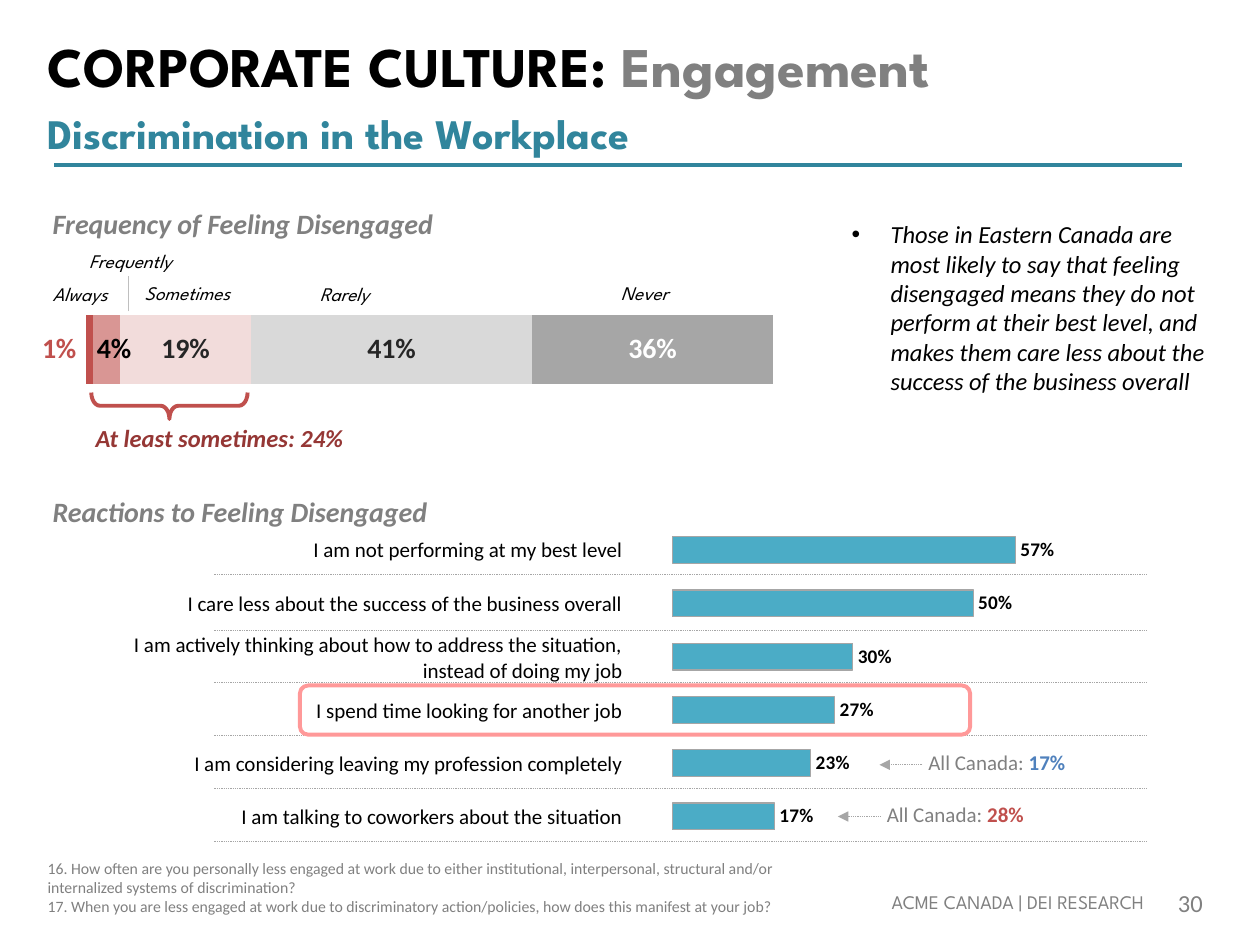
from lxml import etree
from pptx import Presentation
from pptx import util as u
from pptx.chart import data as chart_data
from pptx.dml.color import RGBColor
from pptx.enum import chart as charts
from pptx.enum import dml, shapes, text
from pptx.oxml import ns, parse_xml

PX = 9144  # EMU per px, 100 px to the inch
BODY, HEAD = "Calibri", "League Spartan"
BLACK = RGBColor(0x00, 0x00, 0x00)
WHITE = RGBColor(0xFF, 0xFF, 0xFF)
INK = RGBColor(0x26, 0x26, 0x26)
GREY = RGBColor(0x80, 0x80, 0x80)
MID_GREY = RGBColor(0xA6, 0xA6, 0xA6)
RULE_GREY = RGBColor(0xBF, 0xBF, 0xBF)
PALE_GREY = RGBColor(0xD9, 0xD9, 0xD9)
TEAL = RGBColor(0x31, 0x85, 0x9C)
AQUA = RGBColor(0x4B, 0xAC, 0xC6)
BLUE = RGBColor(0x4F, 0x81, 0xBD)
RED = RGBColor(0xC0, 0x50, 0x4D)
DARK_RED = RGBColor(0x95, 0x37, 0x35)
ROSE = RGBColor(0xD9, 0x96, 0x94)
BLUSH = RGBColor(0xF2, 0xDC, 0xDB)
PINK = RGBColor(0xFF, 0x99, 0x99)
RIGHT = text.PP_ALIGN.RIGHT
PLAIN_TABLE = "{2D5ABB26-0587-4C30-8999-92F81FD0307C}"  # no style, no grid
NO_LEADERS = ('<c:extLst xmlns:c="http://schemas.openxmlformats.org/drawingml/2006/chart">'
              '<c:ext uri="{CE6537A1-D6FC-4f65-9D91-7224C49458BB}" '
              'xmlns:c15="http://schemas.microsoft.com/office/drawing/2012/chart">'
              '<c15:showLeaderLines val="0"/></c:ext></c:extLst>')


def px(*values):
    return [round(value * PX) for value in values]


def set_font(font, size=12, color=BLACK, name=BODY, bold=False, italic=False):
    font.size, font.name = u.Pt(size), name
    font.bold, font.italic = bold, italic
    font.color.rgb = color


def write(para, content, align=None, **style):
    """Fill a paragraph from a string or a list of (text, format changes)."""
    para.alignment = align
    spans = [(content, {})] if isinstance(content, str) else content
    for words, changes in spans:
        if words == "\n":
            para.add_line_break()
            continue
        span = para.add_run()
        span.text = words
        set_font(span.font, **{**style, **changes})


def manual_layout(parent, position, **settings):
    for old in parent.findall(ns.qn("c:layout")):
        parent.remove(old)
    layout = etree.Element(ns.qn("c:layout"))
    manual = etree.SubElement(layout, ns.qn("c:manualLayout"))
    for tag, value in settings.items():
        etree.SubElement(manual, ns.qn("c:" + tag)).set("val", str(value))
    parent.insert(position, layout)


def hide_leader_lines(labels):
    for flag in labels.findall(ns.qn("c:showLeaderLines")):
        flag.set("val", "0")
    labels.append(parse_xml(NO_LEADERS))


class Slide:
    def __init__(self, deck):
        self.page = deck.slides.add_slide(deck.slide_layouts[6])
        self.shapes = self.page.shapes

    def text(self, at, *paras, anchor=text.MSO_ANCHOR.TOP, **style):
        box = self.shapes.add_textbox(*px(*at))
        frame = box.text_frame
        frame.word_wrap, frame.vertical_anchor = True, anchor
        for i, content in enumerate(paras):
            para = frame.add_paragraph() if i else frame.paragraphs[0]
            write(para, content, **style)
        return frame.paragraphs[0]

    def heading(self, top, words):
        self.text((32, top, 354, 37), words, size=16, color=GREY, bold=True, italic=True)

    def bullet(self, at, content, indent, **style):
        para = self.text(at, content, **style)
        para.space_after = u.Pt(6)
        props = para._p.get_or_add_pPr()
        props.set("marL", str(indent * PX))
        props.set("indent", str(-indent * PX))
        etree.SubElement(props, ns.qn("a:buFont")).set("typeface", "Arial")
        etree.SubElement(props, ns.qn("a:buChar")).set("char", "•")

    def line(self, start, end, color, width, dotted=False, arrow=False):
        rule = self.shapes.add_connector(shapes.MSO_CONNECTOR.STRAIGHT, *px(*start, *end))
        rule.line.color.rgb, rule.line.width = color, u.Pt(width)
        if dotted:
            rule.line.dash_style = dml.MSO_LINE.ROUND_DOT
        if arrow:
            tail = etree.SubElement(rule.line._get_or_add_ln(), ns.qn("a:tailEnd"))
            tail.set("type", "triangle")
        etree.SubElement(rule._element.spPr, ns.qn("a:effectLst"))

    def outline(self, kind, at, color, rotation=0, adjust=None):
        shape = self.shapes.add_shape(kind, *px(*at))
        shape.shadow.inherit = False
        shape.fill.background()
        shape.line.color.rgb, shape.line.width = color, u.Pt(2.25)
        shape.rotation = rotation
        if adjust:
            shape.adjustments[0] = adjust

    def table(self, left, top, width, heights, rows):
        frame = self.shapes.add_table(len(rows), 1, *px(left, top, width, sum(heights)))
        grid = frame.table
        grid.first_row = grid.horz_banding = False
        grid._tbl.tblPr.find(ns.qn("a:tableStyleId")).text = PLAIN_TABLE
        for i, (height, words) in enumerate(zip(heights, rows)):
            grid.rows[i].height = px(height)[0]
            cell = grid.cell(i, 0)
            cell.fill.background()
            cell.vertical_anchor = text.MSO_ANCHOR.MIDDLE
            cell.margin_left = cell.margin_right = cell.margin_top = PX
            cell.margin_bottom = 0
            write(cell.text_frame.paragraphs[0], words, align=RIGHT)

    def bars(self, kind, at, plot_box, categories, series, gap, top_value):
        """Draw bars; each series is (values, fill colour, label colour)."""
        data = chart_data.CategoryChartData(number_format="0%")
        data.categories = categories
        for i, (values, *_) in enumerate(series, 1):
            data.add_series(f"Series {i}", values)
        chart = self.shapes.add_chart(kind, *px(*at), data).chart
        chart.has_legend = chart.has_title = False
        set_font(chart.font, 10)
        chart.value_axis.minimum_scale = 0
        chart.value_axis.maximum_scale = top_value
        for axis in (chart.value_axis, chart.category_axis):
            axis.has_major_gridlines = axis.visible = False
        plot = chart.plots[0]
        plot.gap_width, plot.vary_by_categories = gap, False
        for bar, (_, fill, label) in zip(plot.series, series):
            bar.format.fill.solid()
            bar.format.fill.fore_color.rgb = fill
            labels = bar.data_labels
            labels.show_value = True
            labels.number_format, labels.number_format_is_linked = "0%", False
            set_font(labels.font, 16, label, bold=True)
            hide_leader_lines(labels._element)
        manual_layout(chart._chartSpace.chart.plotArea, 0, layoutTarget="inner",
                      xMode="edge", yMode="edge", **dict(zip("xywh", plot_box)))
        return chart


def main():
    deck = Presentation()
    deck.slide_width, deck.slide_height = px(1000, 750)
    slide = Slide(deck)

    # Title and rule
    title = slide.text((28, 22, 927, 112),
                       [("CORPORATE CULTURE: ", {}), ("Engagement", {"color": GREY}), ("\n", {}),
                        ("Discrimination in the Workplace", {"size": 24, "color": TEAL})],
                       anchor=text.MSO_ANCHOR.MIDDLE, size=32, name=HEAD, bold=True)
    title.line_spacing = u.Pt(34)
    slide.line((43, 131), (938, 131), TEAL, 2)

    # Comment
    slide.bullet((666, 169, 302, 151),
                 "Those in Eastern Canada are most likely to say that feeling disengaged means "
                 "they do not perform at their best level, and makes them care less about the "
                 "success of the business overall", indent=31, size=14, italic=True)

    # Frequency: one stacked bar
    shares = [([0.01], RED, RED), ([0.04], ROSE, BLACK), ([0.19], BLUSH, INK),
              ([0.41], PALE_GREY, INK), ([0.36], MID_GREY, WHITE)]
    frequency = slide.bars(charts.XL_CHART_TYPE.BAR_STACKED, (28, 202, 599, 155),
                           (0.067, 0.045, 0.91, 0.884), ["1"], shares, 150, 1)
    frequency.plots[0].overlap = 100
    for i, shift in enumerate((-0.04, 0.01)):  # move the labels of the narrow parts
        label = frequency.plots[0].series[i].points[0].data_label
        set_font(label.font, 16, shares[i][2], bold=True)
        manual_layout(label._dLbl, 1, x=shift, y=0)
    for left, top, width, name in ((32, 219, 76, "Always"), (61, 193, 136, "Frequently"),
                                   (105, 218, 136, "Sometimes"), (244, 219, 123, "Rarely"),
                                   (483, 218, 136, "Never")):
        slide.text((left, top, width, 29), name, size=11, name=HEAD, italic=True)
    slide.line((102, 247), (102, 219), RULE_GREY, 1)
    slide.outline(shapes.MSO_SHAPE.LEFT_BRACE, (124, 260, 21, 124), RED, 270, 0.33)
    slide.text((66, 331, 271, 34), "At least sometimes: 24%",
               size=14, color=DARK_RED, bold=True, italic=True)
    slide.heading(159, "Frequency of Feeling Disengaged")

    # Reactions: bars beside a table of statements
    reactions = {
        "I am not performing at my best level": 0.57,
        "I care less about the success of the business overall": 0.5,
        "I am actively thinking about how to address the situation, instead of doing my job": 0.3,
        "I spend time looking for another job": 0.27,
        "I am considering leaving my profession completely": 0.23,
        "I am talking to coworkers about the situation": 0.17,
    }
    chart = slide.bars(charts.XL_CHART_TYPE.BAR_CLUSTERED, (505, 412, 390, 266),
                       (0.073, 0.013, 0.858, 0.954), list("123456"),
                       [(list(reactions.values()), AQUA, BLACK)], 100, 0.7)
    chart.category_axis.reverse_order = True
    bar = chart.plots[0].series[0]
    bar.format.line.color.rgb, bar.format.line.width = MID_GREY, u.Pt(0.75)
    bar.data_labels.font.size = u.Pt(11)
    bar.data_labels.position = charts.XL_LABEL_POSITION.OUTSIDE_END

    heights = [42, 44, 42, 42, 42, 42]
    slide.table(78, 415, 417, heights, list(reactions))
    for i in range(len(heights)):
        y = 414 + sum(heights[:i + 1])
        slide.line((910, y), (170, y), MID_GREY, 0.5, dotted=True)
    slide.outline(shapes.MSO_SHAPE.ROUNDED_RECTANGLE, (238, 544, 532, 39), PINK)
    slide.heading(388, "Reactions to Feeling Disengaged")

    # National comparisons
    for left, top, share, color in ((727, 590, "17%", BLUE), (694, 631, "28%", RED)):
        slide.text((left, top, 134, 30),
                   [("All Canada: ", {}), (share, {"color": color, "bold": True})], color=GREY)
        slide.line((left + 5, top + 17), (left - 29, top + 17), MID_GREY, 0.5, True, True)

    # Footer
    slide.text((28, 677, 616, 56),
               "16. How often are you personally less engaged at work due to either institutional, "
               "interpersonal, structural and/or internalized systems of discrimination?",
               "17. When you are less engaged at work due to discriminatory action/policies, "
               "how does this manifest at your job?", size=9, color=GREY)
    slide.text((603, 702, 315, 29), "ACME CANADA | DEI RESEARCH",
               align=RIGHT, size=11, color=GREY, name=HEAD)
    slide.text((925, 700, 75, 25), "30", size=14, color=GREY)

    deck.save("out.pptx")


if __name__ == "__main__":
    main()
